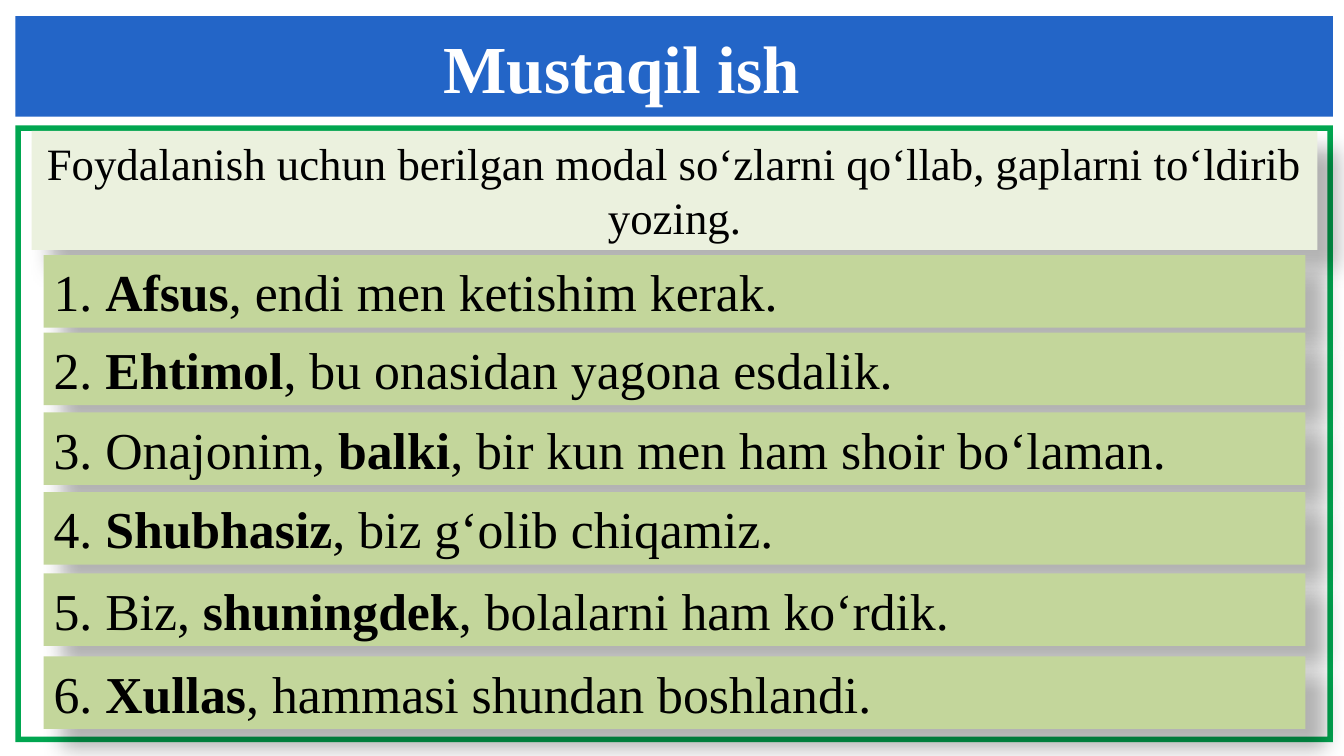
from lxml import etree
from pptx import Presentation
from pptx.dml.color import RGBColor
from pptx.enum.shapes import MSO_SHAPE
from pptx.enum.text import MSO_ANCHOR, MSO_AUTO_SIZE, PP_ALIGN
from pptx.oxml.ns import qn
from pptx.util import Cm, Pt

RECTANGLE, FRAME = MSO_SHAPE.RECTANGLE, MSO_SHAPE.FRAME
TOP, GROW = MSO_ANCHOR.TOP, MSO_AUTO_SIZE.SHAPE_TO_FIT_TEXT
LEFT, CENTER = PP_ALIGN.LEFT, PP_ALIGN.CENTER
FONT = "Times New Roman"
WHITE = RGBColor(0xFF, 0xFF, 0xFF)
BLACK = RGBColor(0x00, 0x00, 0x00)
BLUE = RGBColor(0x23, 0x65, 0xC7)
GREEN = RGBColor(0x00, 0xA6, 0x50)
PALE_GREEN = RGBColor(0xEB, 0xF1, 0xDE)
LIGHT_GREEN = RGBColor(0xC3, 0xD6, 0x9B)

prs = Presentation()
prs.slide_width, prs.slide_height = Cm(33.87), Cm(19.05)
slide = prs.slides.add_slide(prs.slide_layouts[5])


def add_panel(kind, left, top, width, height, color, shadowed=False):
    panel = slide.shapes.add_shape(kind, Cm(left), Cm(top), Cm(width), Cm(height))
    panel.fill.solid()
    panel.fill.fore_color.rgb = color
    panel.line.fill.background()
    panel.shadow.inherit = False
    if shadowed:
        effects = panel._element.spPr.find(qn("a:effectLst"))
        shadow = etree.SubElement(effects, qn("a:outerShdw"), blurRad=str(Pt(15)),
                                  dist=str(Pt(18)), dir="2700000", algn="tl", rotWithShape="0")
        black = etree.SubElement(shadow, qn("a:srgbClr"), val="000000")
        etree.SubElement(black, qn("a:alpha"), val="30000")
    return panel


def write_text(shape, parts, size, color, align):
    """Write (text, bold) parts as one paragraph."""
    frame = shape.text_frame
    frame.word_wrap = True
    frame.auto_size = GROW
    frame.vertical_anchor = TOP
    paragraph = frame.paragraphs[0]
    paragraph.alignment = align
    for text, bold in parts:
        run = paragraph.add_run()
        run.text = text
        run.font.name = FONT
        run.font.size = Pt(size)
        run.font.bold = bold
        run.font.color.rgb = color


# Green frame and blue banner
frame = add_panel(FRAME, 0.39, 3.16, 33.2, 15.54, GREEN)
frame.adjustments[0] = 0.009
add_panel(RECTANGLE, 0.39, 0.41, 33.2, 2.53, BLUE)

# Title, brought in front of the banner
title = slide.shapes.title
title.left, title.top, title.width, title.height = Cm(10.92), Cm(0.53), Cm(18.8), Cm(2.31)
write_text(title, [("Mustaqil ish", True)], 48, WHITE, LEFT)
slide.shapes._spTree.append(title._element)

# Task
task = add_panel(RECTANGLE, 0.8, 3.3, 32.4, 3, PALE_GREEN, shadowed=True)
task_text = "Foydalanish uchun berilgan modal so‘zlarni qo‘llab, gaplarni to‘ldirib yozing."
write_text(task, [(task_text, False)], 32, BLACK, CENTER)

# Sentences: top, opening, modal word, rest
sentences = [
    (6.43, "1. ", "Afsus", ", endi men ketishim kerak."),
    (8.38, "2. ", "Ehtimol", ", bu onasidan yagona esdalik."),
    (10.39, "3. Onajonim, ", "balki", ", bir kun men ham shoir bo‘laman."),
    (12.4, "4. ", "Shubhasiz", ", biz g‘olib chiqamiz."),
    (14.45, "5. Biz, ", "shuningdek", ", bolalarni ham ko‘rdik."),
    (16.54, "6. ", "Xullas", ", hammasi shundan boshlandi."),
]
for top, opening, modal_word, rest in sentences:
    sentence = add_panel(RECTANGLE, 1.1, top, 31.8, 1.83, LIGHT_GREEN, shadowed=True)
    parts = [(opening, False), (modal_word, True), (rest, False)]
    write_text(sentence, parts, 37, BLACK, LEFT)

prs.save("out.pptx")
